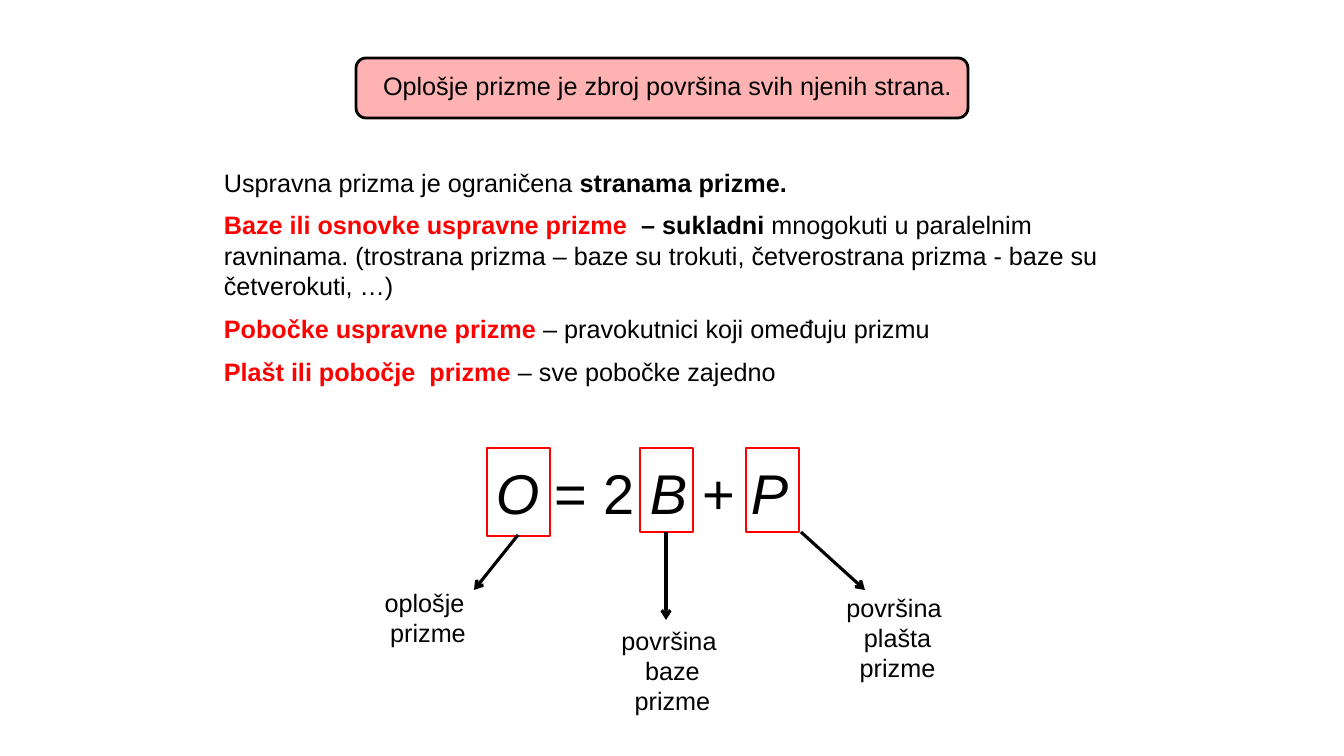
from lxml.etree import SubElement
from pptx import Presentation
from pptx.dml.color import RGBColor
from pptx.enum.shapes import MSO_CONNECTOR as CONN, MSO_SHAPE as SHAPE
from pptx.enum.text import MSO_ANCHOR as ANCHOR, MSO_AUTO_SIZE as AUTO, PP_ALIGN as ALIGN
from pptx.oxml.ns import qn
from pptx.util import Pt

BLACK = RGBColor(0, 0, 0)
RED = RGBColor(255, 0, 0)
PX = 914400 / 100.8

# Content: each paragraph is a list of (text, format) runs
PLAIN, BOLD, ITALIC = {}, {"bold": True}, {"italic": True}
TERM = {"bold": True, "color": RED}

TITLE = [[("Oplošje prizme je zbroj površina svih njenih strana.", PLAIN)]]
DEFINITIONS = [
    [("Uspravna prizma je ograničena ", PLAIN), ("stranama prizme.", BOLD)],
    [("Baze ili osnovke uspravne prizme ", TERM), (" – sukladni ", BOLD),
     ("mnogokuti u paralelnim ravninama. (trostrana prizma – baze su trokuti, "
      "četverostrana prizma - baze su četverokuti, …)", PLAIN)],
    [("Pobočke uspravne prizme", TERM), (" – pravokutnici koji omeđuju prizmu", PLAIN)],
    [("Plašt ili pobočje  prizme", TERM), (" – sve pobočke zajedno", PLAIN)],
]
FORMULA = [[("O", ITALIC), (" = 2 ", PLAIN), ("B", ITALIC), (" + ", PLAIN), ("P", ITALIC)]]

# Formula terms: label lines, label box, frame box, arrow start and end (px)
TERMS = [
    (["oplošje ", "prizme"], (367, 582, 122, 72), (487, 448, 63, 88), (518, 535, 474, 590)),
    (["površina ", "baze", "prizme"], (602, 620, 141, 102), (640, 448, 53, 84), (666, 532, 666, 620)),
    (["površina ", "plašta", "prizme"], (827, 587, 141, 102), (746, 448, 53, 84), (801, 532, 865, 590)),
]
BANNER_BOX = (356, 58, 612, 60)
TITLE_BOX = (373, 65, 598, 40)
DEFINITIONS_BOX = (214, 162, 921, 239)
FORMULA_BOX = (486, 454, 323, 78)


def emu(box):
    return [round(v * PX) for v in box]


def write(sp, paragraphs, size=18, align=ALIGN.LEFT, before=0):
    tf = sp.text_frame
    frame = {"word_wrap": True, "auto_size": AUTO.NONE, "vertical_anchor": ANCHOR.TOP}
    for name, value in frame.items():
        setattr(tf, name, value)
    for i, runs in enumerate(paragraphs):
        p = tf.add_paragraph() if i else tf.paragraphs[0]
        p.alignment, p.space_before = align, Pt(before)
        for text, fmt in runs:
            r = p.add_run()
            r.text = text
            style = {"name": "Arial", "size": Pt(size), "bold": False, "italic": False} | fmt
            r.font.color.rgb = style.pop("color", BLACK)
            for name, value in style.items():
                setattr(r.font, name, value)


def add_text(box, paragraphs, **options):
    write(shapes.add_textbox(*emu(box)), paragraphs, **options)


def add_frame(kind, box, color):
    sp = shapes.add_shape(kind, *emu(box))
    sp.shadow.inherit = False
    sp.fill.background()
    sp.line.color.rgb, sp.line.width = color, Pt(2)
    return sp


def add_arrow(ends):
    line = shapes.add_connector(CONN.STRAIGHT, *emu(ends))
    line.line.color.rgb, line.line.width = BLACK, Pt(2.25)
    SubElement(line.line._get_or_add_ln(), qn("a:tailEnd"), type="arrow")
    SubElement(line._element.spPr, qn("a:effectLst"))


prs = Presentation()
prs.slide_width, prs.slide_height = emu((1344, 756))
shapes = prs.slides.add_slide(prs.slide_layouts[5]).shapes

# Banner with the title on top of its translucent fill
banner = add_frame(SHAPE.ROUNDED_RECTANGLE, BANNER_BOX, BLACK)
banner.fill.solid()
banner.fill.fore_color.rgb = RED
rgb = banner._element.spPr.find(qn("a:solidFill")).find(qn("a:srgbClr"))
SubElement(rgb, qn("a:alpha"), val="30000")
title = shapes.title
title.left, title.top, title.width, title.height = emu(TITLE_BOX)
write(title, TITLE)
banner._element.addnext(title._element)

# Definitions and formula
add_text(DEFINITIONS_BOX, DEFINITIONS, before=9)
add_text(FORMULA_BOX, FORMULA, size=40)

# Framed terms, each with an arrow to its label
for lines, label_box, frame_box, arrow in TERMS:
    add_text(label_box, [[(line, PLAIN)] for line in lines], align=ALIGN.CENTER)
    add_frame(SHAPE.RECTANGLE, frame_box, RED)
    add_arrow(arrow)

prs.save("out.pptx")
